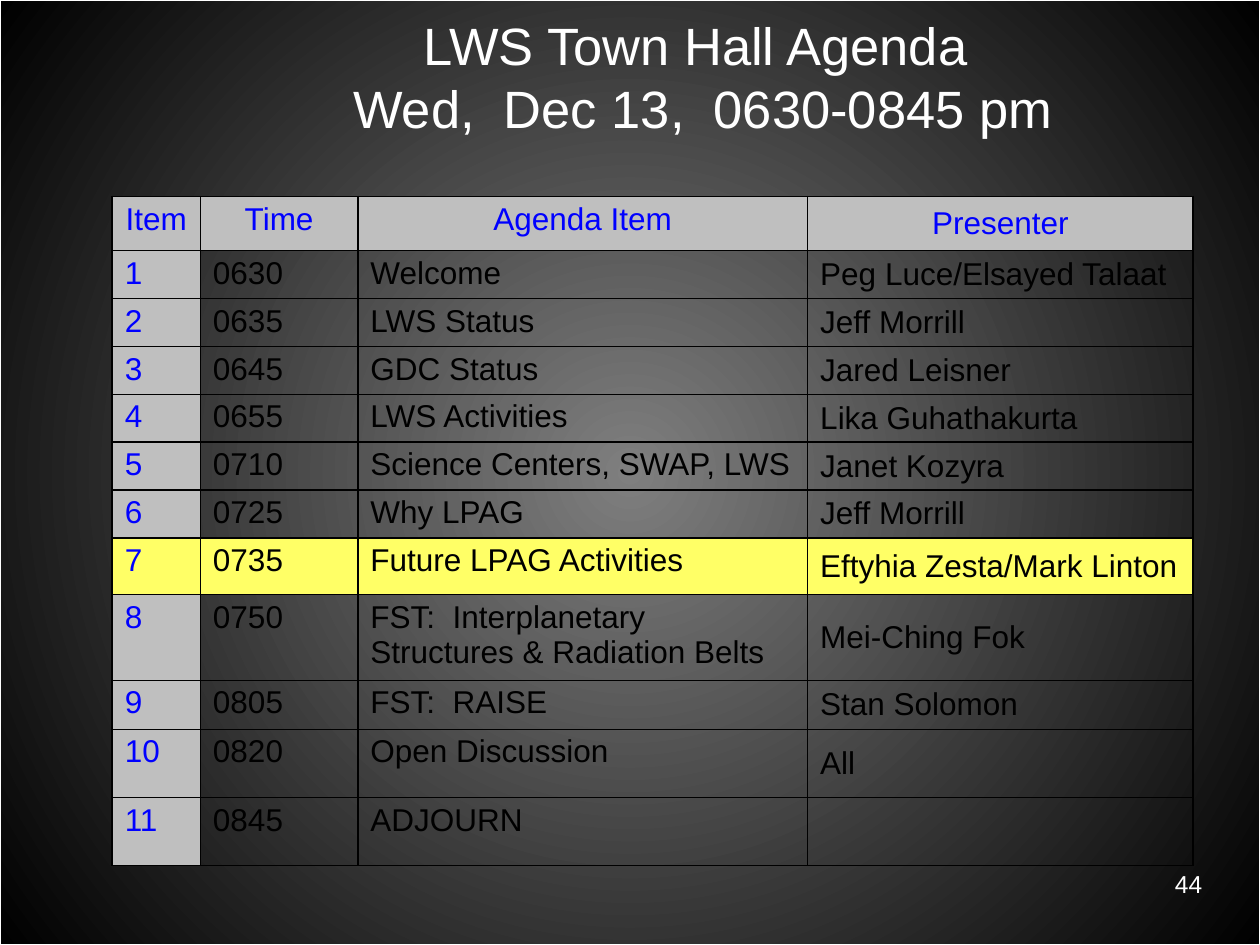
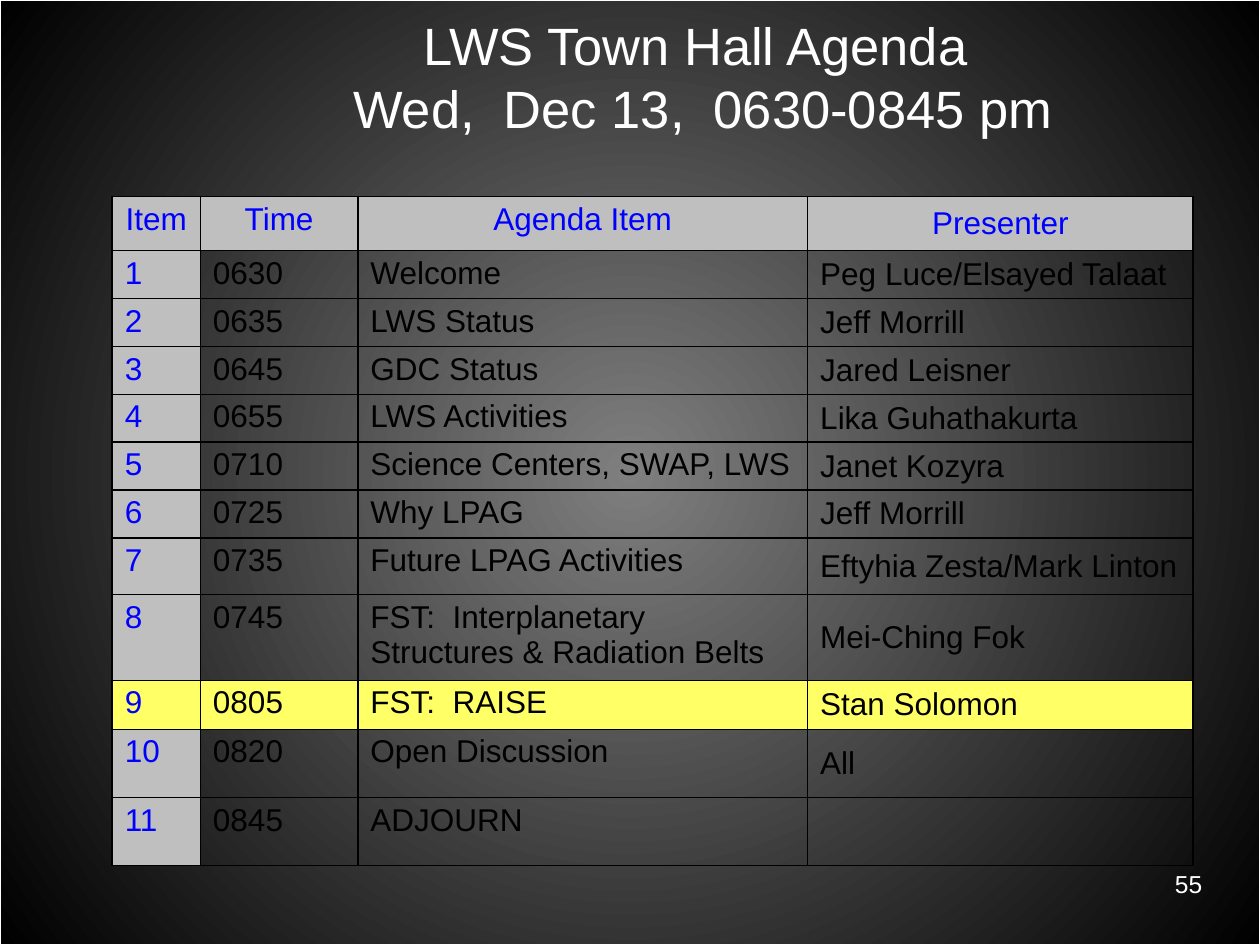
from pptx import Presentation
from pptx.dml.color import RGBColor
from pptx.enum.shapes import MSO_SHAPE as Shape
from pptx.enum.text import MSO_ANCHOR as Anchor, PP_ALIGN as Align
from pptx.oxml import parse_xml
from pptx.oxml.ns import nsdecls, qn
from pptx.util import Inches, Pt

FONT = "Arial"
WHITE, BLACK, BLUE = "FFFFFF", "000000", "0000FF"
GREY, YELLOW = "BFBFBF", "FFFF66"
WIDTH, HEIGHT = 10, 7.5

TITLE = "LWS Town Hall Agenda \vWed,  Dec 13,  0630-0845 pm"
COLS = [0.7, 1.25, 3.57, 3.06]
ROWS = [0.43] + [0.38] * 6 + [0.45, 0.66, 0.39, 0.54, 0.54]
HEADS = ["Item", "Time", "Agenda Item", "Presenter"]
AGENDA = [
    ("0630", "Welcome", "Peg Luce/Elsayed Talaat"),
    ("0635", "LWS Status", "Jeff Morrill"),
    ("0645", "GDC Status", "Jared Leisner"),
    ("0655", "LWS Activities", "Lika Guhathakurta"),
    ("0710", "Science Centers, SWAP, LWS", "Janet Kozyra"),
    ("0725", "Why LPAG", "Jeff Morrill"),
    ("0735", "Future LPAG Activities", "Eftyhia Zesta/Mark Linton"),
    ("0750", "FST:  Interplanetary Structures & Radiation Belts", "Mei-Ching Fok"),
    ("0805", "FST:  RAISE", "Stan Solomon"),
    ("0820", "Open Discussion", "All"),
    ("0845", "ADJOURN", ""),
]


def rgb(code):
    return RGBColor.from_string(code)


def write(frame, text, size, color, align=Align.LEFT):
    frame.text = text
    para = frame.paragraphs[0]
    para.alignment = align
    for run in para.runs:
        run.font.name = FONT
        run.font.size = Pt(size)
        run.font.color.rgb = rgb(color)
    return para


def add_label(slide, box, text, size, align, anchor=Anchor.TOP):
    frame = slide.shapes.add_textbox(*map(Inches, box)).text_frame
    frame.word_wrap = True
    frame.vertical_anchor = anchor
    write(frame, text, size, WHITE, align)


def paint_master(master):
    """Give every slide a round glow that fades to black."""
    fill = master.background.fill
    fill.gradient()
    for stop, color, place in zip(fill.gradient_stops, ("7F7F7F", BLACK), (0, 1)):
        stop.color.rgb = rgb(color)
        stop.position = place
    grad = next(master.element.iter(qn("a:gradFill")))
    grad.replace(grad.find(qn("a:lin")), parse_xml(
        f'<a:path {nsdecls("a")} path="circle">'
        '<a:fillToRect l="50000" t="50000" r="50000" b="50000"/></a:path>'))


def add_frame(slide):
    frame = slide.shapes.add_shape(
        Shape.RECTANGLE, 0, 0, Inches(WIDTH), Inches(HEIGHT))
    frame.shadow.inherit = False
    frame.fill.background()
    frame.line.color.rgb = rgb(WHITE)
    frame.line.width = Pt(0.75)


def add_borders(cell):
    props = cell._tc.get_or_add_tcPr()
    for spot, side in enumerate(("lnL", "lnR", "lnT", "lnB")):
        props.insert(spot, parse_xml(
            f'<a:{side} {nsdecls("a")} w="{Pt(1)}"><a:solidFill>'
            f'<a:srgbClr val="{BLACK}"/></a:solidFill></a:{side}>'))


def fit_cell(cell, para):
    """Keep the row from growing: slim margins, and the end mark in the cell font."""
    cell.margin_top = cell.margin_bottom = Inches(0.04)
    para._p.append(parse_xml(
        f'<a:endParaRPr {nsdecls("a")} sz="1800">'
        f'<a:latin typeface="{FONT}"/></a:endParaRPr>'))


def add_agenda(slide, box, items, current):
    """Draw the agenda and mark the row of the current item."""
    rows = [HEADS] + [(str(n), *item) for n, item in enumerate(items, 1)]
    table = slide.shapes.add_table(
        len(rows), len(COLS), *map(Inches, box)).table
    for col, width in zip(table.columns, COLS):
        col.width = Inches(width)
    for row, height in zip(table.rows, ROWS):
        row.height = Inches(height)
    for r, row in enumerate(rows):
        for c, text in enumerate(row):
            cell = table.cell(r, c)
            label = r == 0 or c == 0
            para = write(cell.text_frame, text, 18, BLUE if label else BLACK,
                         Align.LEFT if r else Align.CENTER)
            fit_cell(cell, para)
            if c == len(COLS) - 1:
                cell.vertical_anchor = Anchor.MIDDLE
            if r == current or label:
                cell.fill.solid()
                cell.fill.fore_color.rgb = rgb(YELLOW if r == current else GREY)
            else:
                cell.fill.background()
            add_borders(cell)


def add_slide(deck, number, items, current):
    slide = deck.slides.add_slide(deck.slide_layouts[6])
    add_frame(slide)
    add_label(slide, (7.56, 6.85, 2.08, 0.39), number, 14, Align.RIGHT)
    add_label(slide, (1.13, 0.14, 8.9, 0.93), TITLE, 30,
              Align.CENTER, Anchor.MIDDLE)
    add_agenda(slide, (0.89, 1.56, sum(COLS), sum(ROWS)), items, current)


def main():
    deck = Presentation()
    deck.slide_width, deck.slide_height = Inches(WIDTH), Inches(HEIGHT)
    paint_master(deck.slide_master)
    add_slide(deck, "44", AGENDA, 7)
    moved = list(AGENDA)
    moved[7] = ("0745", *AGENDA[7][1:])
    add_slide(deck, "55", moved, 9)
    deck.save("out.pptx")


if __name__ == "__main__":
    main()
